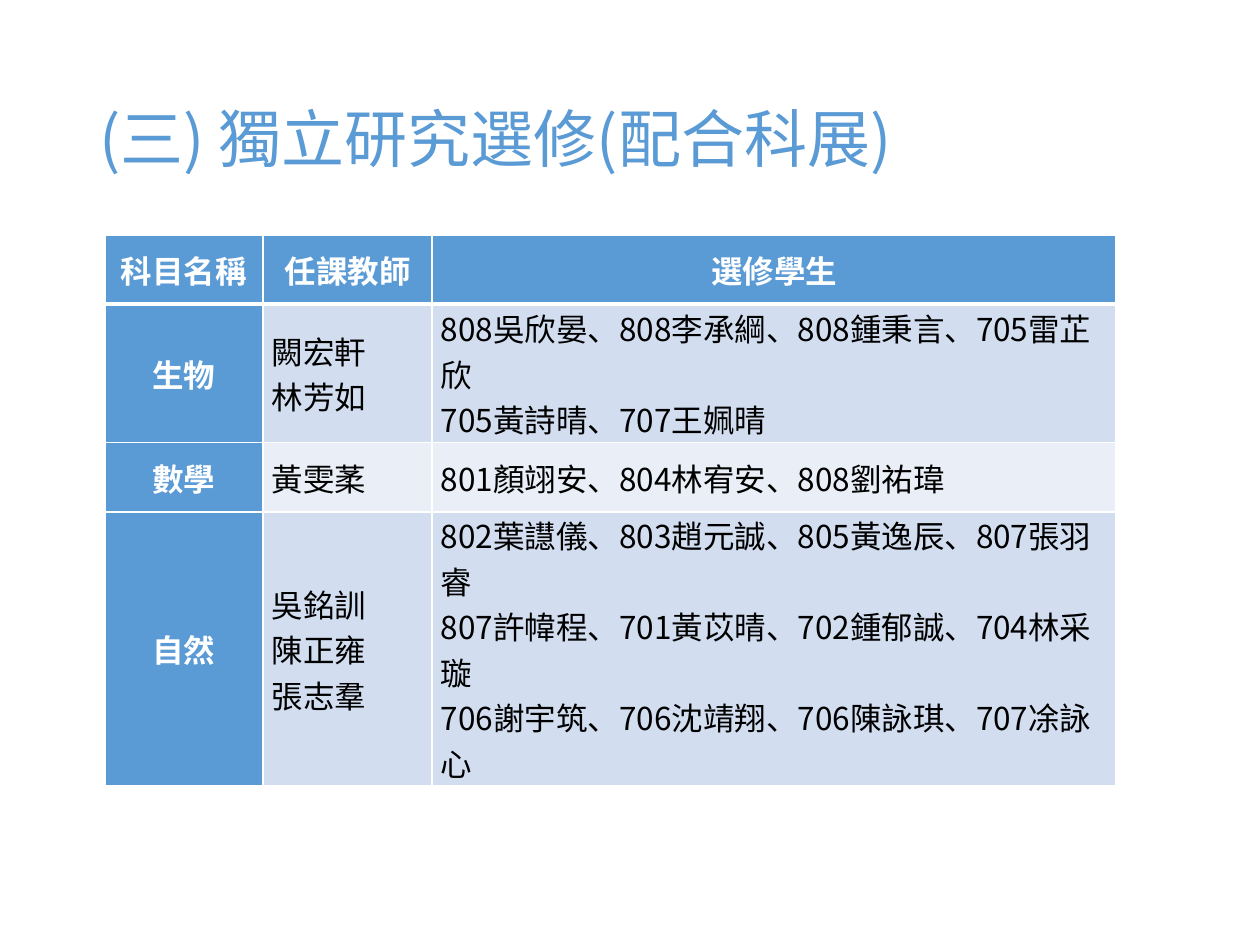
from dataclasses import dataclass
from pptx import Presentation as Deck
from pptx.dml.color import RGBColor as Rgb
from pptx.enum.text import MSO_ANCHOR as Anchor, PP_ALIGN as Align
from pptx.oxml import parse_xml
from pptx.oxml.ns import nsdecls
from pptx.util import Pt


@dataclass(frozen=True)
class Theme:
    font: str = "Noto Sans CJK SC"
    blue: str = "5B9BD5"
    white: str = "FFFFFF"
    black: str = "000000"
    bands: tuple = ("D2DEEF", "EAEFF7")
    head: int = 36
    body: int = 18
    thin: int = 1
    thick: int = 3


class Page:
    def __init__(self, deck, theme):
        self.theme = theme
        self.slide = deck.slides.add_slide(deck.slide_layouts[5])

    def style(self, frame, size, color, bold, align):
        frame.vertical_anchor = Anchor.MIDDLE
        for para in frame.paragraphs:
            para.alignment = align
            for run in para.runs:
                font = run.font
                font.size, font.bold = Pt(size), bold
                font.color.rgb = Rgb.from_string(color)
                font.name = self.theme.font
                face = f'<a:ea {nsdecls("a")} typeface="{self.theme.font}"/>'
                run._r.get_or_add_rPr().find("{*}latin").addnext(parse_xml(face))

    def title(self, text, left, top, width, height):
        shape = self.slide.shapes.title
        shape.left, shape.top = Pt(left), Pt(top)
        shape.width, shape.height = Pt(width), Pt(height)
        frame = shape.text_frame
        frame.text = text
        frame.word_wrap = True
        frame.paragraphs[0].line_spacing = 0.9
        self.style(frame, self.theme.head, self.theme.blue, False, Align.LEFT)

    def border(self, cell, row):
        theme = self.theme
        sides = {"L": theme.thin, "R": theme.thin,
                 "T": theme.thick if row == 1 else theme.thin,
                 "B": theme.thick if row == 0 else theme.thin}
        for spot, (side, wide) in enumerate(sides.items()):
            line = (f'<a:ln{side} {nsdecls("a")} w="{Pt(wide)}"><a:solidFill>'
                    f'<a:srgbClr val="{theme.white}"/></a:solidFill></a:ln{side}>')
            cell._tc.get_or_add_tcPr().insert(spot, parse_xml(line))

    def cell(self, cell, text, row, col):
        theme = self.theme
        label = row == 0 or col == 0
        cell.margin_left = cell.margin_right = Pt(5)
        cell.margin_top = cell.margin_bottom = Pt(0)
        cell.fill.solid()
        fill = theme.blue if label else theme.bands[(row - 1) % 2]
        cell.fill.fore_color.rgb = Rgb.from_string(fill)
        self.border(cell, row)
        cell.text_frame.text = text
        self.style(cell.text_frame, theme.body, theme.white if label else theme.black,
                   label, Align.CENTER if label else Align.LEFT)
        cell.vertical_anchor = Anchor.MIDDLE

    def table(self, rows, left, top, widths, heights):
        table = self.slide.shapes.add_table(
            len(rows), len(widths), Pt(left), Pt(top),
            Pt(sum(widths)), Pt(sum(heights))).table
        for col, width in zip(table.columns, widths):
            col.width = Pt(width)
        for line, height in zip(table.rows, heights):
            line.height = Pt(height)
        for row, texts in enumerate(rows):
            for col, text in enumerate(texts):
                self.cell(table.cell(row, col), text, row, col)


ROWS = [
    ("科目名稱", "任課教師", "選修學生"),
    ("生物", "闕宏軒\n林芳如",
     "808吳欣晏、808李承綱、808鍾秉言、705雷芷欣\n705黃詩晴、707王姵晴"),
    ("數學", "黃雯葇", "801顏翊安、804林宥安、808劉祐瑋"),
    ("自然", "吳銘訓\n陳正雍\n張志羣",
     "802葉譿儀、803趙元誠、805黃逸辰、807張羽睿\n"
     "807許幃程、701黃苡晴、702鍾郁誠、704林采璇\n"
     "706謝宇筑、706沈靖翔、706陳詠琪、707凃詠心"),
]


def main():
    deck = Deck()
    deck.slide_width, deck.slide_height = Pt(720), Pt(540)
    page = Page(deck, Theme())
    page.title("(三) 獨立研究選修(配合科展)", 49.5, 28.75, 621, 104.4)
    unit = 39.6
    page.table(ROWS, 59.9, 134.2, (90.5, 96.5, 391),
               [unit * part for part in (1, 2, 1, 3)])
    deck.save("out.pptx")


if __name__ == "__main__":
    main()
